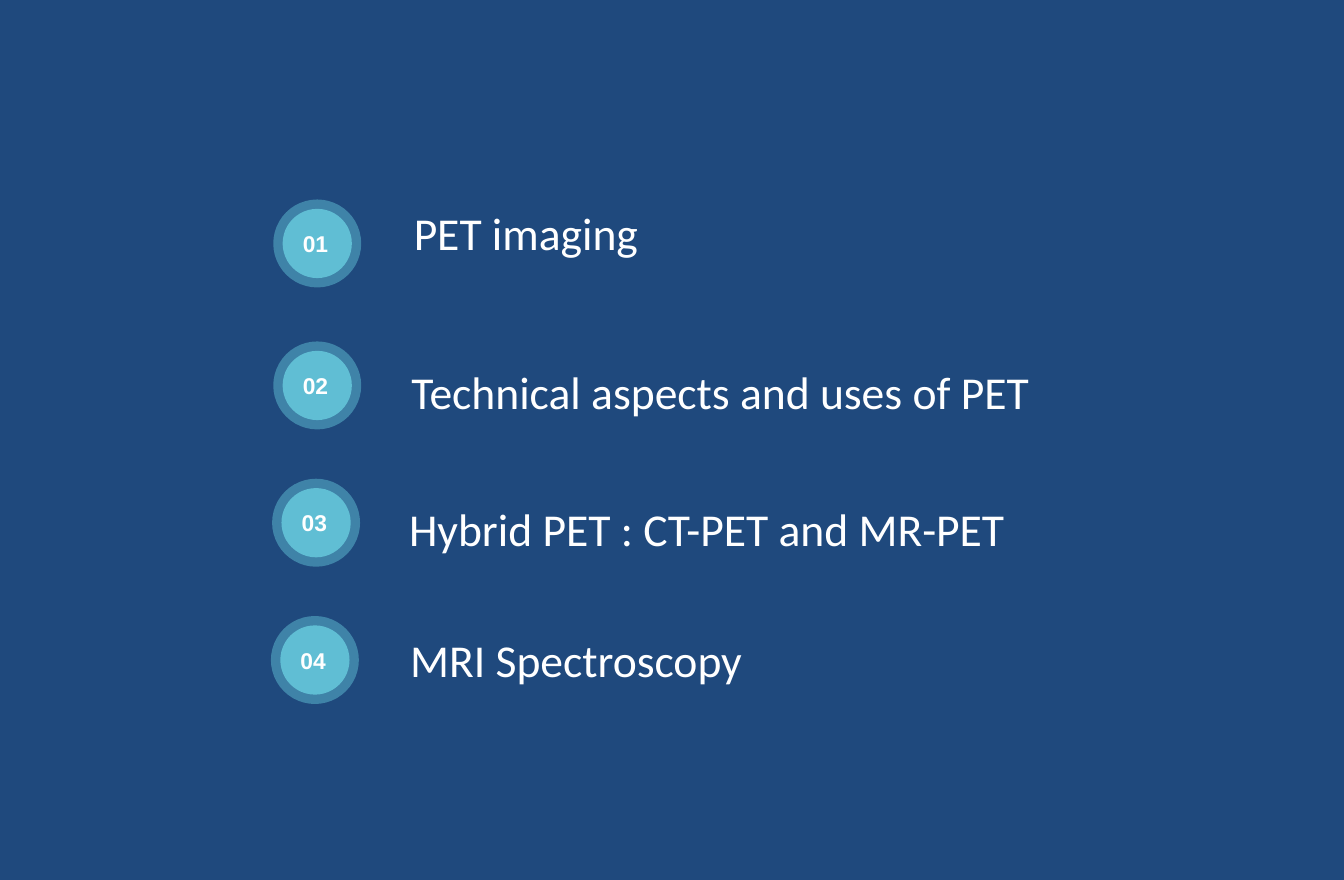
import pptx
import pptx.dml.color
import pptx.enum.shapes
import pptx.enum.text
import pptx.oxml
import pptx.oxml.ns
import pptx.util

Inches = pptx.util.Inches
COLORS = {"background": "1F497D", "badge": "60BED4", "text": "FFFFFF"}
RING_SIZE = 0.75
DISC_SIZE = 0.59
DISC_INSET = (RING_SIZE - DISC_SIZE) / 2


def add_circle(group, left, top, size):
    circle = group.shapes.add_shape(
        pptx.enum.shapes.MSO_SHAPE.OVAL,
        Inches(left), Inches(top), Inches(size), Inches(size))
    circle.shadow.inherit = False
    circle.fill.solid()
    circle.fill.fore_color.rgb = pptx.dml.color.RGBColor.from_string(COLORS["badge"])
    circle.line.fill.background()
    return circle


def add_words(para, words, font, size, bold):
    span = para.add_run()
    span.text = words
    span.font.name = font
    span.font.size = pptx.util.Pt(size)
    span.font.bold = bold
    span.font.color.rgb = pptx.dml.color.RGBColor.from_string(COLORS["text"])


deck = pptx.Presentation()
deck.slide_width = Inches(11.46)
deck.slide_height = Inches(7.5)
page = deck.slides.add_slide(deck.slide_layouts[6])
page.background.fill.solid()
page.background.fill.fore_color.rgb = pptx.dml.color.RGBColor.from_string(COLORS["background"])

topics = [
    ("PET imaging", 2.33, 1.70, 3.43, 1.70, 2.13),
    ("Technical aspects and uses of PET", 2.33, 2.91, 3.41, 3.05, 5.53),
    ("Hybrid PET : CT-PET and MR-PET", 2.32, 4.08, 3.39, 4.22, 5.37),
    ("MRI Spectroscopy", 2.31, 5.25, 3.40, 5.34, 3.06),
]

for number, (topic, ring_left, ring_top, left, top, width) in enumerate(topics, 1):
    badge = page.shapes.add_group_shape()
    ring = add_circle(badge, ring_left, ring_top, RING_SIZE)
    ring_color = ring.fill._xPr.find(".//" + pptx.oxml.ns.qn("a:srgbClr"))
    ring_color.append(pptx.oxml.parse_xml(
        f'<a:alpha {pptx.oxml.ns.nsdecls("a")} val="50000"/>'))

    disc = add_circle(badge, ring_left + DISC_INSET, ring_top + DISC_INSET, DISC_SIZE)
    frame = disc.text_frame
    frame.margin_left = frame.margin_top = frame.margin_bottom = 0
    frame.margin_right = Inches(0.03)
    frame.word_wrap = False
    frame.vertical_anchor = pptx.enum.text.MSO_ANCHOR.MIDDLE
    para = frame.paragraphs[0]
    para.alignment = pptx.enum.text.PP_ALIGN.CENTER
    add_words(para, f"{number:02d}", "Arial", 14, True)

    box = page.shapes.add_textbox(Inches(left), Inches(top), Inches(width), Inches(0.57))
    box.text_frame.word_wrap = False
    box.text_frame.auto_size = pptx.enum.text.MSO_AUTO_SIZE.SHAPE_TO_FIT_TEXT
    add_words(box.text_frame.paragraphs[0], topic, "Calibri", 28, False)

deck.save("out.pptx")
